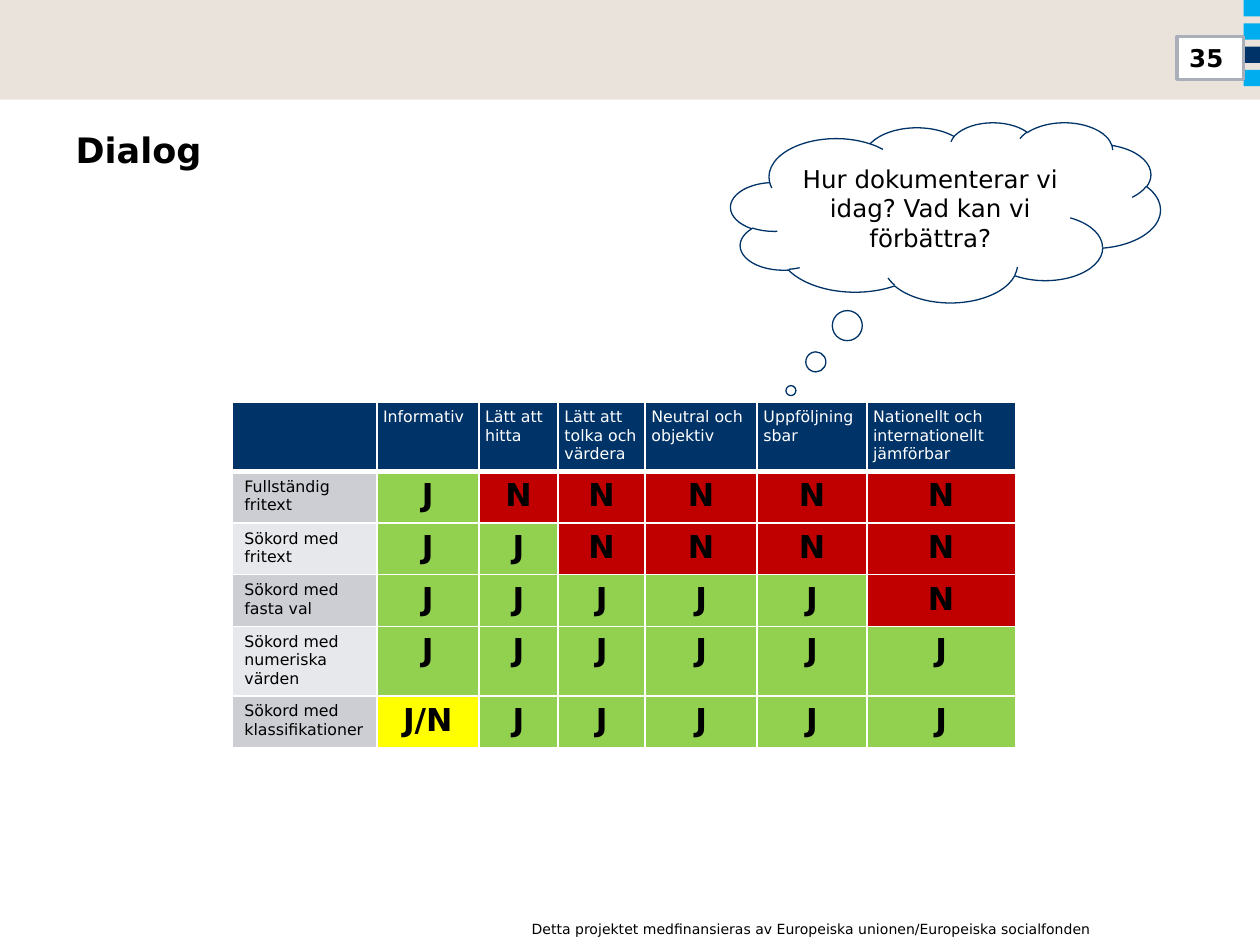
from typing import NamedTuple

from lxml.etree import SubElement
from pptx import Presentation
from pptx.dml.color import RGBColor
from pptx.enum.shapes import MSO_SHAPE
from pptx.enum.text import MSO_ANCHOR, PP_ALIGN
from pptx.oxml.ns import qn
from pptx.util import Inches, Pt

FONT = "DejaVu Sans"
COLORS = {
    "black": "000000", "white": "FFFFFF", "sand": "E9E3DC",
    "sky": "00AEEF", "navy": "003468", "frame": "AAAEB9",
    "band_dark": "CCCED4", "band_light": "E7E8EB",
}
ANSWER_COLORS = {"J": "92D050", "N": "C00000", "J/N": "FFFF00"}


class Area(NamedTuple):
    left: float
    top: float
    width: float
    height: float

    def lengths(self) -> list:
        return [Inches(value) for value in self]


class Style(NamedTuple):
    size: float
    bold: bool = False
    color: str = "black"
    align: PP_ALIGN = PP_ALIGN.LEFT


class Method(NamedTuple):
    label: str
    answers: list


HEADINGS = ["", "Informativ", "Lätt att hitta", "Lätt att tolka och värdera",
            "Neutral och objektiv", "Uppföljningsbar",
            "Nationellt och internationellt jämförbar"]
COLUMN_WIDTHS = [1.15, 0.81, 0.63, 0.69, 0.89, 0.87, 1.18]
METHODS = [
    Method("Fullständig fritext", ["J", "N", "N", "N", "N", "N"]),
    Method("Sökord med fritext", ["J", "J", "N", "N", "N", "N"]),
    Method("Sökord med fasta val", ["J", "J", "J", "J", "J", "N"]),
    Method("Sökord med numeriska värden", ["J"] * 6),
    Method("Sökord med klassifikationer", ["J/N"] + ["J"] * 5),
]


def rgb(hex_color: str) -> RGBColor:
    return RGBColor.from_string(hex_color)


def write(frame, text: str, style: Style) -> None:
    frame.word_wrap = True
    para = frame.paragraphs[0]
    para.text = text
    para.alignment = style.align
    para.space_before = Pt(0)
    para.font.name = FONT
    para.font.size = Pt(style.size)
    para.font.bold = style.bold
    para.font.color.rgb = rgb(COLORS[style.color])


def add_box(page, kind, area: Area, fill: str, line: str = "", width: float = 0):
    box = page.shapes.add_shape(kind, *area.lengths())
    box.shadow.inherit = False
    box.fill.solid()
    box.fill.fore_color.rgb = rgb(COLORS[fill])
    if line:
        box.line.color.rgb = rgb(COLORS[line])
        box.line.width = Pt(width)
    else:
        box.line.fill.background()
    return box


def set_borders(cell, top: float = 1, bottom: float = 1) -> None:
    properties = cell._tc.get_or_add_tcPr()
    for side, width in {"L": 1, "R": 1, "T": top, "B": bottom}.items():
        border = SubElement(properties, qn(f"a:ln{side}"), w=str(Pt(width)))
        fill = SubElement(border, qn("a:solidFill"))
        SubElement(fill, qn("a:srgbClr"), val=COLORS["white"])


def fill_cell(cell, text: str, style: Style, fill: str,
              top: float = 1, bottom: float = 1) -> None:
    set_borders(cell, top, bottom)
    cell.fill.solid()
    cell.fill.fore_color.rgb = rgb(fill)
    write(cell.text_frame, text, style)


def add_matrix(page) -> None:
    row_height = 0.41
    area = Area(1.84, 3.19, sum(COLUMN_WIDTHS), row_height * (len(METHODS) + 1))
    table = page.shapes.add_table(
        len(METHODS) + 1, len(HEADINGS), *area.lengths()).table
    table.first_row = table.horz_banding = False
    for column, width in zip(table.columns, COLUMN_WIDTHS):
        column.width = Inches(width)

    # Heading row
    for column, heading in enumerate(HEADINGS):
        cell = table.cell(0, column)
        fill_cell(cell, heading, Style(9, color="white"), COLORS["navy"], bottom=3)
        cell.margin_left = cell.margin_right = Inches(0.05)

    # One row per way of documenting
    answer_style = Style(18, bold=True, align=PP_ALIGN.CENTER)
    for row, method in enumerate(METHODS, start=1):
        band = COLORS["band_dark" if row % 2 else "band_light"]
        top = 3 if row == 1 else 1
        fill_cell(table.cell(row, 0), method.label, Style(9), band, top)
        for column, answer in enumerate(method.answers, start=1):
            fill_cell(table.cell(row, column), answer, answer_style,
                      ANSWER_COLORS[answer], top)


def main() -> None:
    deck = Presentation()
    deck.slide_width, deck.slide_height = Inches(10), Inches(7.5)
    page = deck.slides.add_slide(deck.slide_layouts[5])

    # Top band and its stripes
    add_box(page, MSO_SHAPE.RECTANGLE, Area(0, 0, 10, 0.79), "sand")
    for index, color in enumerate(["sky", "sky", "navy", "sky"]):
        add_box(page, MSO_SHAPE.RECTANGLE,
                Area(9.87, index * 0.185, 0.13, 0.13), color)

    # Footer
    footer = page.shapes.add_textbox(*Area(4.01, 7.26, 4.75, 0.24).lengths())
    write(footer.text_frame,
          "Detta projektet medfinansieras av Europeiska unionen/Europeiska socialfonden",
          Style(8, align=PP_ALIGN.RIGHT))

    # Title
    title = page.shapes.title
    title.left, title.top, title.width, title.height = Area(0.5, 0.97, 8.42, 1.25).lengths()
    title.text_frame.vertical_anchor = MSO_ANCHOR.TOP
    write(title.text_frame, "Dialog", Style(20, bold=True))

    add_matrix(page)

    # Thought cloud
    cloud = add_box(page, MSO_SHAPE.CLOUD_CALLOUT, Area(5.8, 0.97, 3.41, 1.43),
                    "white", "navy", 0.75)
    cloud.adjustments[0], cloud.adjustments[1] = -0.36, 0.99
    cloud.text_frame.vertical_anchor = MSO_ANCHOR.MIDDLE
    write(cloud.text_frame, "Hur dokumenterar vi idag? Vad kan vi förbättra?",
          Style(14, align=PP_ALIGN.CENTER))

    # Page number
    number = add_box(page, MSO_SHAPE.RECTANGLE, Area(9.34, 0.29, 0.53, 0.34),
                     "white", "frame", 2)
    number.text_frame.vertical_anchor = MSO_ANCHOR.TOP
    write(number.text_frame, "35", Style(14, bold=True))

    deck.save("out.pptx")


if __name__ == "__main__":
    main()
